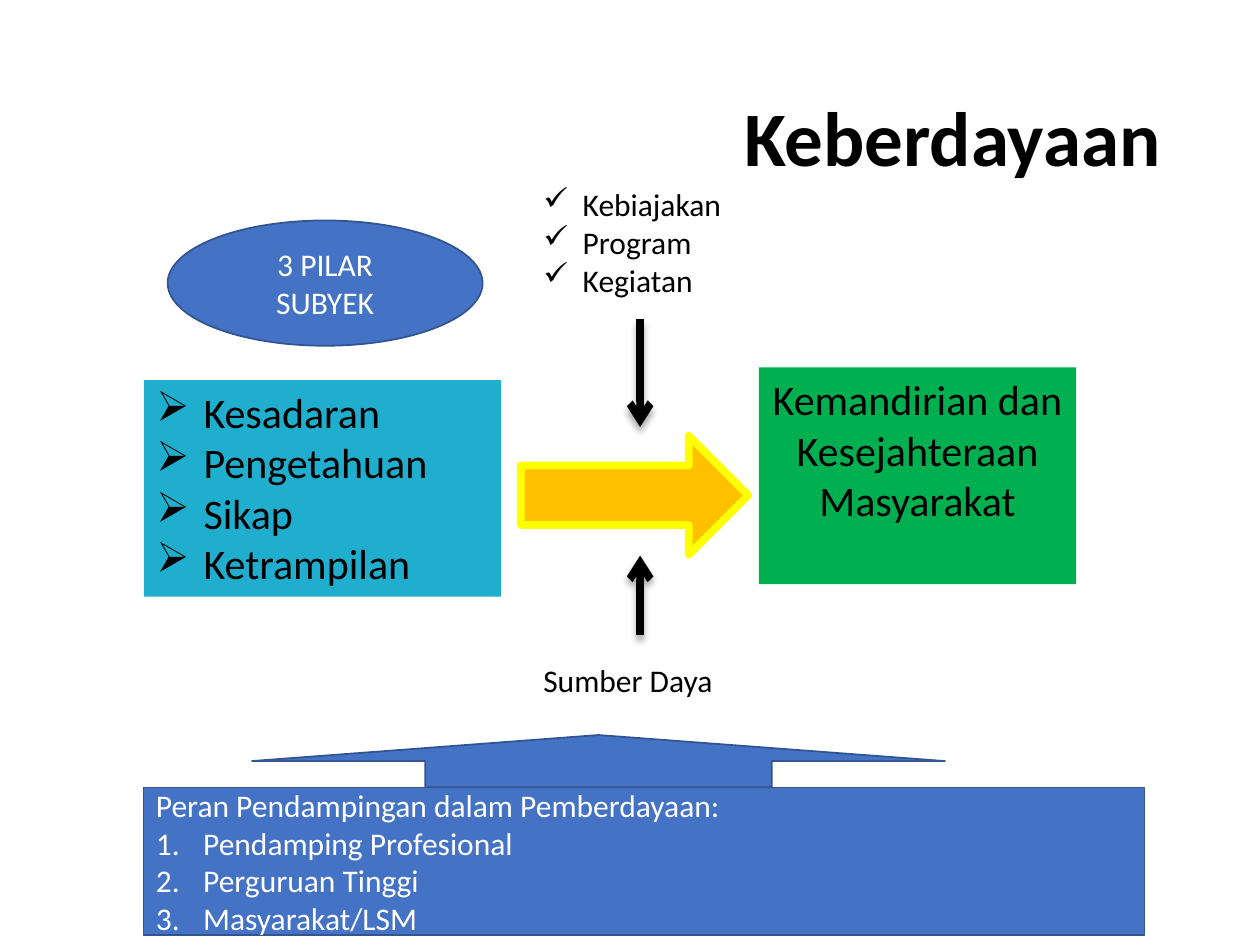
import pptx
import pptx.util
import pptx.dml.color
import pptx.enum.shapes
import pptx.enum.text
import pptx.oxml
import pptx.oxml.ns
from lxml import etree

Pt = pptx.util.Pt
SHAPE = pptx.enum.shapes.MSO_SHAPE
ANCHOR = pptx.enum.text.MSO_ANCHOR
ALIGN = pptx.enum.text.PP_ALIGN
FONT = "Calibri"
BLUE, NAVY = "4472C4", "325491"
BLACK, WHITE = "000000", "FFFFFF"

TITLE = ["Keberdayaan"]
ROLE_HEADING = "Peran Pendampingan dalam Pemberdayaan:"
ROLES = ["Pendamping Profesional", "Perguruan Tinggi", "Masyarakat/LSM"]
CAPACITIES = ["Kesadaran", "Pengetahuan", "Sikap", "Ketrampilan"]
OUTCOME = ["Kemandirian dan Kesejahteraan Masyarakat"]
INPUTS = ["Kebiajakan", "Program", "Kegiatan"]
RESOURCES = ["Sumber Daya"]
PILLARS = ["3 PILAR SUBYEK"]

SHAPES = {
    "roles": (SHAPE.RECTANGLE, (82, 450, 572, 84.5), BLUE, NAVY, 1),
    "support": (SHAPE.UP_ARROW, (144, 420, 396, 29.8), BLUE, NAVY, 1),
    "capacities": (SHAPE.RECTANGLE, (82.2, 217.2, 204, 123.8), "1FAECD", None, 0),
    "outcome": (SHAPE.RECTANGLE, (433.6, 210, 181.4, 123.8), "00B050", None, 0),
    "process": (SHAPE.RIGHT_ARROW, (297.6, 249, 130, 68), "FFC000", "FFFF00", 4.33),
    "pillars": (SHAPE.OVAL, (95.8, 126, 180, 71.6), BLUE, NAVY, 1),
}
ARROW_X = 365.8
ARROWS = [(182.2, 244), (363, 317.5)]


def rgb(value):
    return pptx.dml.color.RGBColor.from_string(value)


def add_sub(parent, tag, **attrs):
    return etree.SubElement(parent, pptx.oxml.ns.qn(tag), attrs)


def draw(s, kind, box, fill, line, width):
    sp = s.shapes.add_shape(kind, *map(Pt, box))
    sp.shadow.inherit = False
    sp.fill.solid()
    sp.fill.fore_color.rgb = rgb(fill)
    if line:
        sp.line.color.rgb = rgb(line)
        sp.line.width = Pt(width)
        if width > 1:
            add_sub(sp.line._get_or_add_ln(), "a:round")
    else:
        sp.line.fill.background()
    return sp


def textbox(s, *box):
    return s.shapes.add_textbox(*map(Pt, box))


def write(sp, lines, size, color=BLACK, align=ALIGN.LEFT, anchor=ANCHOR.TOP,
          bullet=None, indent=27, first=0, bold=False, spacing=None):
    tf = sp.text_frame
    tf.word_wrap = True
    tf.vertical_anchor = anchor
    for i, line in enumerate(lines):
        p = tf.add_paragraph() if i else tf.paragraphs[0]
        p.alignment = align
        if spacing:
            p.line_spacing = spacing
        if bullet and i >= first:
            pPr = p._p.get_or_add_pPr()
            pPr.set("marL", str(Pt(indent)))
            pPr.set("indent", str(-Pt(indent)))
            if bullet == "number":
                add_sub(pPr, "a:buAutoNum", type="arabicPeriod")
            else:
                add_sub(pPr, "a:buChar", char=bullet)
        r = p.add_run()
        r.text = line
        r.font.name = FONT
        r.font.size = Pt(size)
        r.font.bold = bold
        r.font.color.rgb = rgb(color)


def arrow(s, x, start, end):
    cx = s.shapes.add_connector(pptx.enum.shapes.MSO_CONNECTOR.STRAIGHT,
                                Pt(x), Pt(start), Pt(x), Pt(end))
    cx.line.color.rgb = rgb(BLACK)
    cx.line.width = Pt(4.33)
    add_sub(cx.line._get_or_add_ln(), "a:tailEnd", type="arrow")
    effects = add_sub(cx._element.spPr, "a:effectLst")
    shadow = add_sub(effects, "a:outerShdw", blurRad=str(Pt(4)), dist=str(Pt(3)),
                     dir="5400000", rotWithShape="0")
    add_sub(add_sub(shadow, "a:srgbClr", val=BLACK), "a:alpha", val="35000")


def main():
    prs = pptx.Presentation()
    prs.slide_width, prs.slide_height = Pt(720), Pt(540)
    s = prs.slides.add_slide(prs.slide_layouts[6])

    write(textbox(s, 49.5, 28.8, 621, 104.4), TITLE, 44, align=ALIGN.RIGHT,
          anchor=ANCHOR.MIDDLE, bold=True, spacing=0.9)
    drawn = {name: draw(s, *spec_row) for name, spec_row in SHAPES.items()}
    write(drawn["roles"], [ROLE_HEADING] + ROLES, 18, WHITE,
          anchor=ANCHOR.MIDDLE, bullet="number", first=1)
    write(drawn["capacities"], CAPACITIES, 24, bullet="➢")
    write(drawn["outcome"], OUTCOME, 24, align=ALIGN.CENTER)
    write(drawn["pillars"], PILLARS, 18, WHITE, ALIGN.CENTER, ANCHOR.MIDDLE)
    write(textbox(s, 303.4, 102.2, 142, 72.7), INPUTS, 18, bullet="✓", indent=22.5)
    for start, end in ARROWS:
        arrow(s, ARROW_X, start, end)
    write(textbox(s, 303.4, 374.4, 130, 29), RESOURCES, 18)

    prs.save("out.pptx")


if __name__ == "__main__":
    main()
